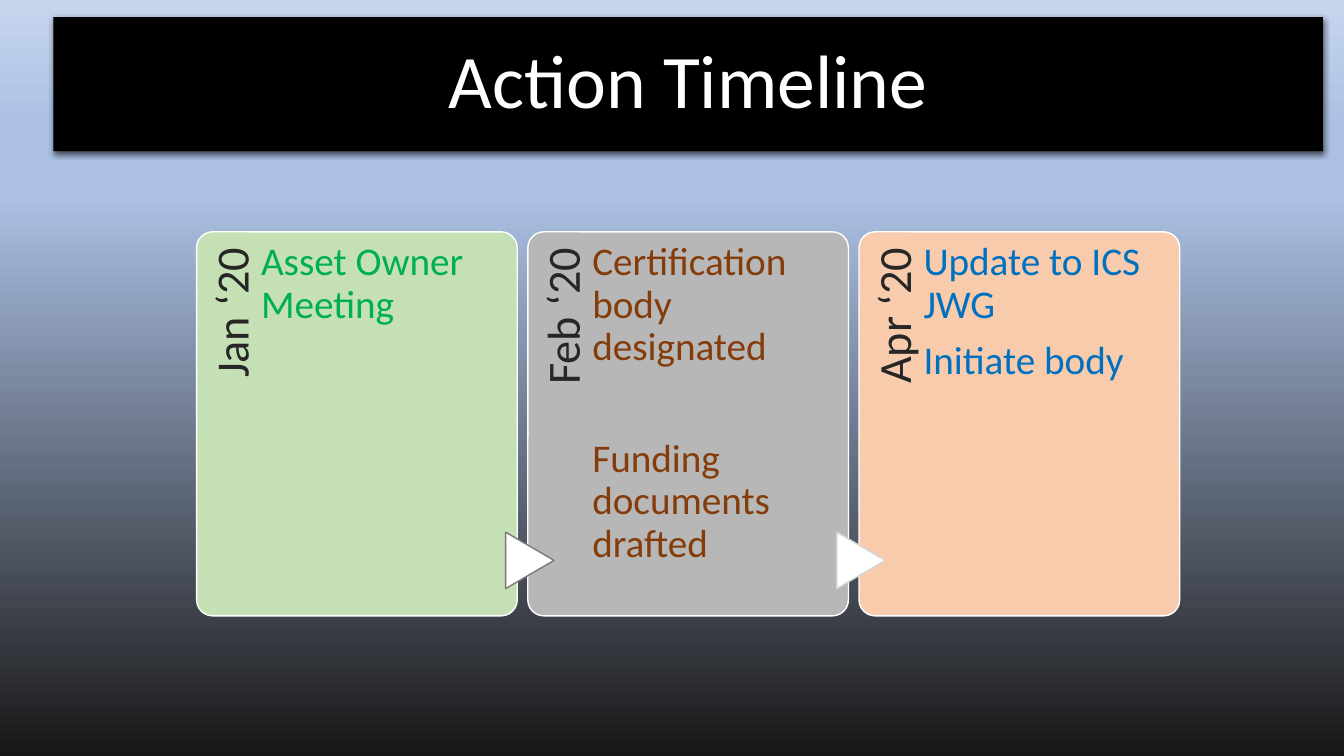
from lxml import etree
from pptx import Presentation
from pptx.dml.color import RGBColor
from pptx.enum.shapes import MSO_SHAPE as SHAPE
from pptx.enum.text import MSO_ANCHOR as ANCHOR, PP_ALIGN as ALIGN
from pptx.oxml import parse_xml
from pptx.oxml.ns import nsdecls, qn
from pptx.util import Inches, Pt

BLACK = RGBColor(0x00, 0x00, 0x00)
WHITE = RGBColor(0xFF, 0xFF, 0xFF)
CHARCOAL = RGBColor(0x26, 0x26, 0x26)
GREEN = RGBColor(0x00, 0xB0, 0x50)
BROWN = RGBColor(0x84, 0x3C, 0x0B)
BLUE = RGBColor(0x00, 0x70, 0xC0)
PALE_GREEN = RGBColor(0xC5, 0xE0, 0xB4)
GRAY = RGBColor(0xB7, 0xB7, 0xB7)
PEACH = RGBColor(0xF8, 0xCB, 0xAD)
DARK_EDGE = RGBColor(0x7A, 0x7A, 0x7A)
LIGHT_EDGE = RGBColor(0xD6, 0xD6, 0xD6)

FONT = "Calibri"
TITLE = "Action Timeline"
BACKGROUND = [(0, "181717"), (74, "ABC0E4"), (83, "ABC0E4"), (100, "C7D5ED")]
# month, card fill, text colour, space between actions (pt), actions
CARDS = [
    ("Jan ‘20", PALE_GREEN, GREEN, 0, ["Asset Owner Meeting"]),
    ("Feb ‘20", GRAY, BROWN, 40, ["Certification body designated",
                                  "Funding documents drafted"]),
    ("Apr ‘20", PEACH, BLUE, 0, ["Update to ICS JWG", "Initiate body"]),
]
ARROW_EDGES = [DARK_EDGE, LIGHT_EDGE]

FIRST_LEFT, LAST_LEFT = 1.95, 8.52
PITCH = (LAST_LEFT - FIRST_LEFT) / (len(CARDS) - 1)
CARD_TOP, CARD_W, CARD_H = 2.3, 3.18, 3.81


def add_block(s, kind, box, fill, edge=None):
    sp = s.shapes.add_shape(kind, *map(Inches, box))
    sp.shadow.inherit = False
    sp.fill.solid()
    sp.fill.fore_color.rgb = fill
    if edge is None:
        sp.line.fill.background()
    else:
        sp.line.color.rgb = edge
        sp.line.width = Pt(1)
    return sp


def write(tf, texts, size, color, align, after=0, between=0):
    tf.word_wrap = True
    for i, text in enumerate(texts):
        p = tf.add_paragraph() if i else tf.paragraphs[0]
        p.text = text
        p.alignment = align
        p.line_spacing = 0.9
        p.space_before = Pt(between if i else 0)
        p.space_after = Pt(after)
        p.font.name, p.font.size, p.font.color.rgb = FONT, Pt(size), color


def add_text(s, box, top, right, *args):
    sp = s.shapes.add_textbox(*map(Inches, box))
    tf = sp.text_frame
    tf.margin_left = tf.margin_bottom = 0
    tf.margin_top, tf.margin_right = Inches(top), Inches(right)
    write(tf, *args)
    return sp


def paint_background(s):
    fill = s.background.fill
    fill.gradient()
    fill.gradient_angle = 90
    stops = next(s.element.iter(qn("a:gsLst")))
    for stop in list(stops):
        stops.remove(stop)
    for position, color in BACKGROUND:
        gs = etree.SubElement(stops, qn("a:gs"), pos=str(position * 1000))
        etree.SubElement(gs, qn("a:srgbClr"), val=color)


def add_title(s):
    sp = add_block(s, SHAPE.RECTANGLE, (0.53, 0.17, 12.59, 1.33), BLACK)
    sp.text_frame.vertical_anchor = ANCHOR.MIDDLE
    write(sp.text_frame, [TITLE], 54, WHITE, ALIGN.CENTER)
    effects = sp.element.spPr.find(qn("a:effectLst"))
    effects.append(parse_xml(
        f'<a:outerShdw {nsdecls("a")} blurRad="{Pt(4.5)}" dist="{Pt(1.5)}" '
        'dir="5400000" algn="ctr" rotWithShape="0"><a:srgbClr val="000000">'
        '<a:alpha val="63000"/></a:srgbClr></a:outerShdw>'))


def add_card(s, i, month, fill, color, between, actions):
    left = FIRST_LEFT + i * PITCH
    card = add_block(s, SHAPE.ROUNDED_RECTANGLE,
                     (left, CARD_TOP, CARD_W, CARD_H), fill, WHITE)
    card.adjustments[0] = 0.05
    label = add_text(s, (left - 1.24, 3.54, 3.12, 0.64), 0.12, 0.16,
                     [month], 33, CHARCOAL, ALIGN.RIGHT)
    label.rotation = 270
    if i:
        arrow = add_block(s, SHAPE.FLOWCHART_EXTRACT,
                          (left - 0.26, 5.32, 0.56, 0.48), WHITE,
                          ARROW_EDGES[i - 1])
        arrow.rotation = 90
    add_text(s, (left + 0.64, CARD_TOP, 2.37, CARD_H), 0.1, 0,
             actions, 28, color, ALIGN.LEFT, 9.8, between)


def main():
    prs = Presentation()
    prs.slide_width, prs.slide_height = Inches(13.33), Inches(7.5)
    s = prs.slides.add_slide(prs.slide_layouts[6])
    paint_background(s)
    add_title(s)
    for i, card in enumerate(CARDS):
        add_card(s, i, *card)
    prs.save("out.pptx")


if __name__ == "__main__":
    main()
